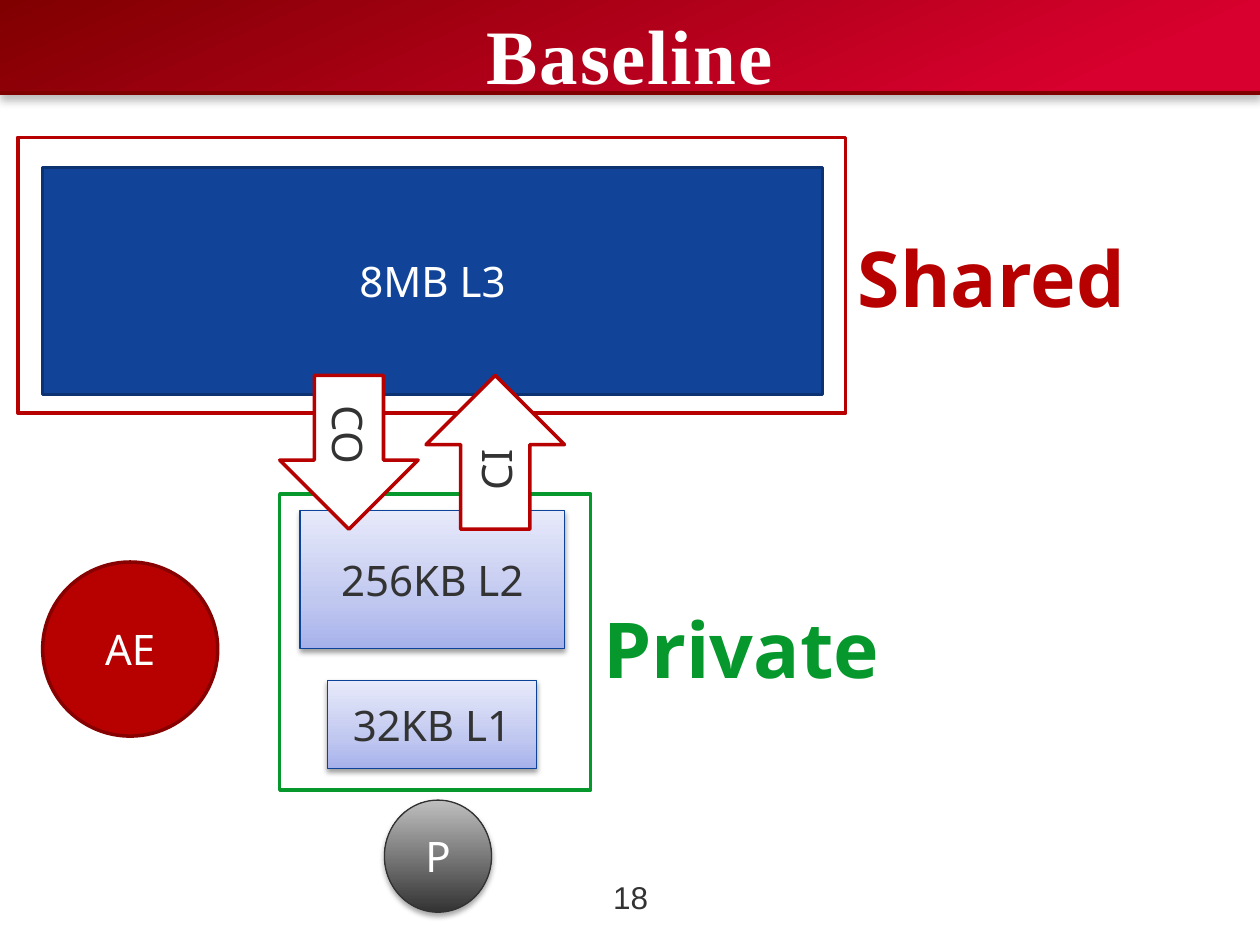
from lxml import etree
from pptx import Presentation
from pptx import util as u
from pptx.dml.color import RGBColor
from pptx.enum import shapes as kinds, text as t
from pptx.oxml import parse_xml
from pptx.oxml.ns import nsdecls, qn

RED, GREEN, DARK, WHITE = "B70101", "06982C", "333333", "FFFFFF"
color = RGBColor.from_string
KIND = kinds.MSO_SHAPE


def write(frame, wording, size, font, ink, bold=False, align=t.PP_ALIGN.CENTER):
    paragraph = frame.paragraphs[0]
    paragraph.text = wording
    paragraph.alignment = align
    paragraph.font.size, paragraph.font.name = u.Pt(size), font
    paragraph.font.bold = bold
    paragraph.font.color.rgb = color(ink)


def draw(kind, box, fill=None, edge=None, width=2, angle=270, shadow=None):
    """Add a shape; fill is a colour, a list of (percent, colour) stops or None;
    shadow is (opacity percent, blur pt, distance pt), cast downwards."""
    shape = slide.shapes.add_shape(kind, *map(u.Cm, box))
    if fill is None:
        shape.fill.background()
    elif isinstance(fill, str):
        shape.fill.solid()
        shape.fill.fore_color.rgb = color(fill)
    else:
        stops = "".join(
            f'<a:gs pos="{pos * 1000}"><a:srgbClr val="{c}"/></a:gs>' for pos, c in fill)
        shape.fill.gradient()
        old = shape._element.spPr.find(qn("a:gradFill"))
        old.getparent().replace(old, parse_xml(
            f'<a:gradFill {nsdecls("a")} rotWithShape="1"><a:gsLst>{stops}</a:gsLst>'
            f'<a:lin ang="{angle * 60000}" scaled="0"/></a:gradFill>'))
    if edge:
        shape.line.color.rgb = color(edge)
        shape.line.width = u.Pt(width)
    else:
        shape.line.fill.background()
    shape.shadow.inherit = False
    if shadow:
        opacity, blur, distance = shadow
        shape._element.spPr.find(qn("a:effectLst")).append(parse_xml(
            f'<a:outerShdw {nsdecls("a")} blurRad="{u.Pt(blur)}" dist="{u.Pt(distance)}" '
            f'dir="5400000" rotWithShape="0"><a:srgbClr val="000000">'
            f'<a:alpha val="{opacity * 1000}"/></a:srgbClr></a:outerShdw>'))
    return shape


deck = Presentation()
deck.slide_width, deck.slide_height = u.Cm(25.4), u.Cm(19.05)
slide = deck.slides.add_slide(deck.slide_layouts[6])

# Header band, title and page number
draw(KIND.RECTANGLE, (0, 0, 25.43, 1.88), [(0, "800000"), (87, "D8002E")],
     angle=66, shadow=(25, 5, 3.8))
rule = slide.shapes.add_connector(
    kinds.MSO_CONNECTOR.STRAIGHT, 0, u.Cm(1.88), u.Cm(25.43), u.Cm(1.88))
rule.line.color.rgb = color("800000")
rule.line.width = u.Pt(2)
etree.SubElement(rule._element.spPr, qn("a:effectLst"))

page = slide.shapes.add_textbox(u.Cm(11.71), u.Cm(17.58), u.Cm(2.01), u.Cm(1.02)).text_frame
page.word_wrap = True
write(page, "18", 18, "Arial", DARK)

title = slide.shapes.add_textbox(0, 0, u.Cm(25.4), u.Cm(1.85)).text_frame
title.word_wrap = True
title.margin_top, title.margin_bottom = u.Cm(0.15), 0
write(title, "Baseline", 44, "Times New Roman", WHITE, bold=True)
title.paragraphs[0].runs[0].font._element.set("spc", "100")

# Caches, processor, their frames, transfer arrows and AE
cache_fill = [(0, "A6B1EB"), (35, "C1C8F0"), (100, "E7EAFA")]
cache_shadow = (38, 3.1, 1.6)
parts = [
    (KIND.RECTANGLE, (0.86, 3.38, 15.72, 4.57), "114499", "0D3271", 2, None, "8MB L3", WHITE),
    (KIND.RECTANGLE, (6.05, 10.29, 5.33, 2.79), cache_fill, "0D4299", 0.75, cache_shadow,
     "256KB L2", DARK),
    (KIND.RECTANGLE, (6.6, 13.72, 4.22, 1.78), cache_fill, "0D4299", 0.75, cache_shadow,
     "32KB L1", DARK),
    (KIND.OVAL, (7.75, 16.13, 2.16, 2.26), [(0, "333333"), (100, "BFBFBF")], "323232", 0.75,
     (35, 3.1, 1.8), "P", WHITE),
    (KIND.RECTANGLE, (5.64, 9.96, 6.27, 5.97), None, GREEN, 2, None, "", DARK),
    (KIND.RECTANGLE, (0.36, 2.77, 16.69, 5.56), None, RED, 2, None, "", DARK),
    (KIND.DOWN_ARROW, (5.64, 7.57, 2.79, 3.1), WHITE, RED, 2, None, "CO", DARK),
    (KIND.DOWN_ARROW, (8.59, 7.57, 2.79, 3.1), WHITE, RED, 2, None, "CI", DARK),
    (KIND.OVAL, (0.86, 11.33, 3.53, 3.51), RED, "870101", 2, None, "AE", WHITE),
]
for kind, box, fill, edge, width, shadow, wording, ink in parts:
    part = draw(kind, box, fill, edge, width, shadow=shadow)
    if wording:
        part.text_frame.vertical_anchor = t.MSO_ANCHOR.MIDDLE
        write(part.text_frame, wording, 24, "Noto Sans", ink)
    if kind == KIND.DOWN_ARROW:
        part.text_frame._txBody.bodyPr.set("vert", "vert")
    if wording == "CI":
        part._element.spPr.xfrm.set("flipV", "1")

for wording, left, top, ink in [("Private", 11.91, 12.01, GREEN), ("Shared", 17.04, 4.52, RED)]:
    label = slide.shapes.add_textbox(u.Cm(left), u.Cm(top), u.Cm(6.1), u.Cm(2.13)).text_frame
    label.word_wrap = False
    label.auto_size = t.MSO_AUTO_SIZE.SHAPE_TO_FIT_TEXT
    write(label, wording, 44, "Noto Sans", ink, bold=True, align=t.PP_ALIGN.LEFT)

deck.save("out.pptx")
